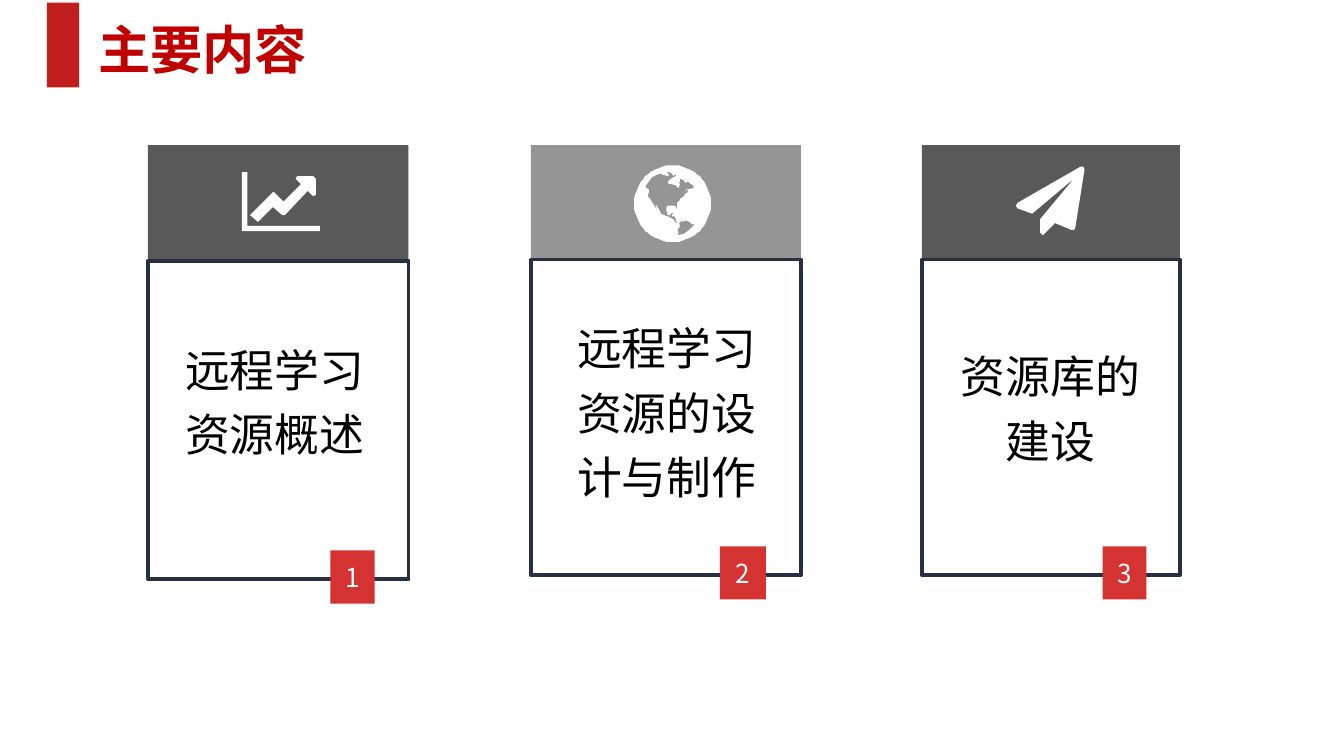
from math import cos, pi, sin
from lxml.etree import SubElement
from pptx import Presentation
from pptx.dml.color import RGBColor
from pptx.enum.shapes import MSO_SHAPE
from pptx.enum.text import MSO_ANCHOR, MSO_AUTO_SIZE, PP_ALIGN
from pptx.oxml.ns import qn
from pptx.util import Pt

FONT = "Noto Sans CJK SC"
COLORS = {
    "dark": "595959", "mid": "959595", "outline": "272F42", "badge": "D53232",
    "bar": "C11E1E", "title": "C00000", "text": "000000", "white": "FFFFFF",
}

# Icon outlines, in hundredths of an inch
CHART_ICON = [
    [(58, 44), (0, 44), (0, 0), (4, 0), (4, 40), (58, 40)],
    [(55, 17), (53, 18), (49, 14), (32, 32), (30, 32), (23, 26), (12, 37), (6, 32),
     (23, 15), (24, 15), (31, 22), (44, 9), (40, 5), (41, 3), (53, 3), (55, 5)],
]
PLANE_ICON = [
    [(51, 2), (44, 46), (43, 47), (41, 47), (29, 42), (21, 50), (20, 51), (18, 49),
     (18, 39), (43, 9), (12, 35), (1, 31), (0, 29), (1, 27), (48, 0), (50, 0)],
]
GLOBE_RADIUS = 28.5
GLOBE_ICON = [
    [(GLOBE_RADIUS * (1 + cos(step * pi / 36)), GLOBE_RADIUS * (1 + sin(step * pi / 36)))
     for step in range(72)],
    # North America
    [(37, 20), (39, 18), (44, 17), (44, 15), (41, 13), (40, 12), (38, 13), (37, 11),
     (34, 10), (34, 12), (33, 13), (34, 14), (33, 17), (31, 15), (28, 14), (26, 14),
     (25, 13), (26, 11), (29, 9), (31, 8), (31, 7), (30, 7), (29, 8), (28, 6),
     (26, 5), (24, 5), (26, 7), (25, 8), (21, 7), (20, 6), (17, 7), (13, 9),
     (8, 16), (11, 18), (11, 20), (10, 23), (12, 25), (13, 27), (15, 30), (17, 33),
     (16, 29), (18, 32), (20, 36), (22, 37), (25, 38), (29, 40), (31, 43), (33, 43),
     (31, 42), (31, 40), (30, 38), (28, 38), (28, 37), (30, 35), (27, 36), (27, 37),
     (25, 37), (24, 34), (24, 31), (25, 30), (28, 30), (30, 30), (31, 31), (32, 33),
     (32, 28), (34, 26), (34, 25), (37, 23), (38, 21), (40, 20), (40, 18), (38, 19)],
    # South America
    [(45, 44), (43, 44), (41, 42), (38, 41), (36, 42), (35, 41), (34, 43), (33, 42),
     (34, 45), (33, 47), (32, 48), (33, 50), (32, 52), (37, 51), (41, 48)],
]

# Card and caption boxes are left, top, width, height;
# caption boxes and icon offsets start at the card's corner
CARDS = [
    {"box": (79.2, 77.8, 139.7, 232.6), "color": "dark", "text": "远程学习资源概述",
     "caption": (5, 96.5, 126, 86), "icon": CHART_ICON, "icon_offset": (50.4, 14.4)},
    {"box": (284.4, 77.8, 144.7, 230.4), "color": "mid", "text": "远程学习资源的设计与制作",
     "caption": (6.5, 85, 132.5, 86), "icon": GLOBE_ICON, "icon_offset": (55.4, 10.8)},
    {"box": (493.9, 77.8, 138.2, 230.4), "color": "dark", "text": "资源库的建设",
     "caption": (10.8, 100, 116, 86), "icon": PLANE_ICON, "icon_offset": (50.4, 11.5)},
]


def rgb(name):
    return RGBColor.from_string(COLORS[name])


def paint(shape, fill=None, line=None):
    shape.shadow.inherit = False
    if fill:
        shape.fill.solid()
        shape.fill.fore_color.rgb = rgb(fill)
    else:
        shape.fill.background()
    if line:
        shape.line.color.rgb = rgb(line)
        shape.line.width = Pt(2)
    else:
        shape.line.fill.background()


def add_box(page, box, fill=None, line=None):
    shape = page.shapes.add_shape(MSO_SHAPE.RECTANGLE, *map(Pt, box))
    paint(shape, fill, line)
    return shape


def write(shape, text, size, color, align, bold=False):
    para = shape.text_frame.paragraphs[0]
    para.text = text
    para.alignment = align
    para.font.size = Pt(size)
    para.font.bold = bold
    para.font.color.rgb = rgb(color)
    para.font.name = FONT
    # East Asian characters take their own typeface entry
    defaults = para._p.pPr.find(qn("a:defRPr"))
    SubElement(defaults, qn("a:ea")).set("typeface", FONT)
    return para


def add_icon(page, outlines, left, top):
    first, *others = outlines
    builder = page.shapes.build_freeform(*first[0], scale=Pt(0.72))
    builder.add_line_segments(first[1:])
    for outline in others:
        builder.move_to(*outline[0])
        builder.add_line_segments(outline[1:])
    paint(builder.convert_to_shape(Pt(left), Pt(top)), "white")


def add_heading(page, box):
    left, top, width, height = box
    title = page.shapes.title
    title.left, title.top = Pt(left + 20.2), Pt(top + 4.3)
    title.width, title.height = Pt(width - 20.2), Pt(height - 4.3)
    title.text_frame.auto_size = MSO_AUTO_SIZE.NONE
    title.text_frame.vertical_anchor = MSO_ANCHOR.TOP
    write(title, "主要内容", 28, "title", PP_ALIGN.JUSTIFY, bold=True)
    add_box(page, (left, top, 17.3, height), "bar")


def add_card(page, number, card):
    left, top, width, height = card["box"]
    header = 0.266 * height

    # Header band and outlined body
    add_box(page, (left, top, width, header), card["color"])
    add_box(page, (left, top + header, width, height - header), line="outline")

    # Number badge across the lower edge
    badge = add_box(page, (left + 0.7 * width, top + 0.933 * height,
                           0.17 * width, 0.123 * height), "badge")
    badge.text_frame.word_wrap = False
    badge.text_frame.vertical_anchor = MSO_ANCHOR.MIDDLE
    write(badge, str(number), 14, "white", PP_ALIGN.CENTER)

    # Caption
    across, down, *size = card["caption"]
    caption = page.shapes.add_textbox(Pt(left + across), Pt(top + down), *map(Pt, size))
    caption.text_frame.word_wrap = True
    para = write(caption, card["text"], 24, "text", PP_ALIGN.CENTER)
    para.line_spacing = 1.2

    # Icon
    across, down = card["icon_offset"]
    add_icon(page, card["icon"], left + across, top + down)


def main():
    deck = Presentation()
    deck.slide_width, deck.slide_height = Pt(720), Pt(405)
    page = deck.slides.add_slide(deck.slide_layouts[5])
    add_heading(page, (25.2, 1.4, 165, 45.4))
    for number, card in enumerate(CARDS, 1):
        add_card(page, number, card)
    deck.save("out.pptx")


if __name__ == "__main__":
    main()
